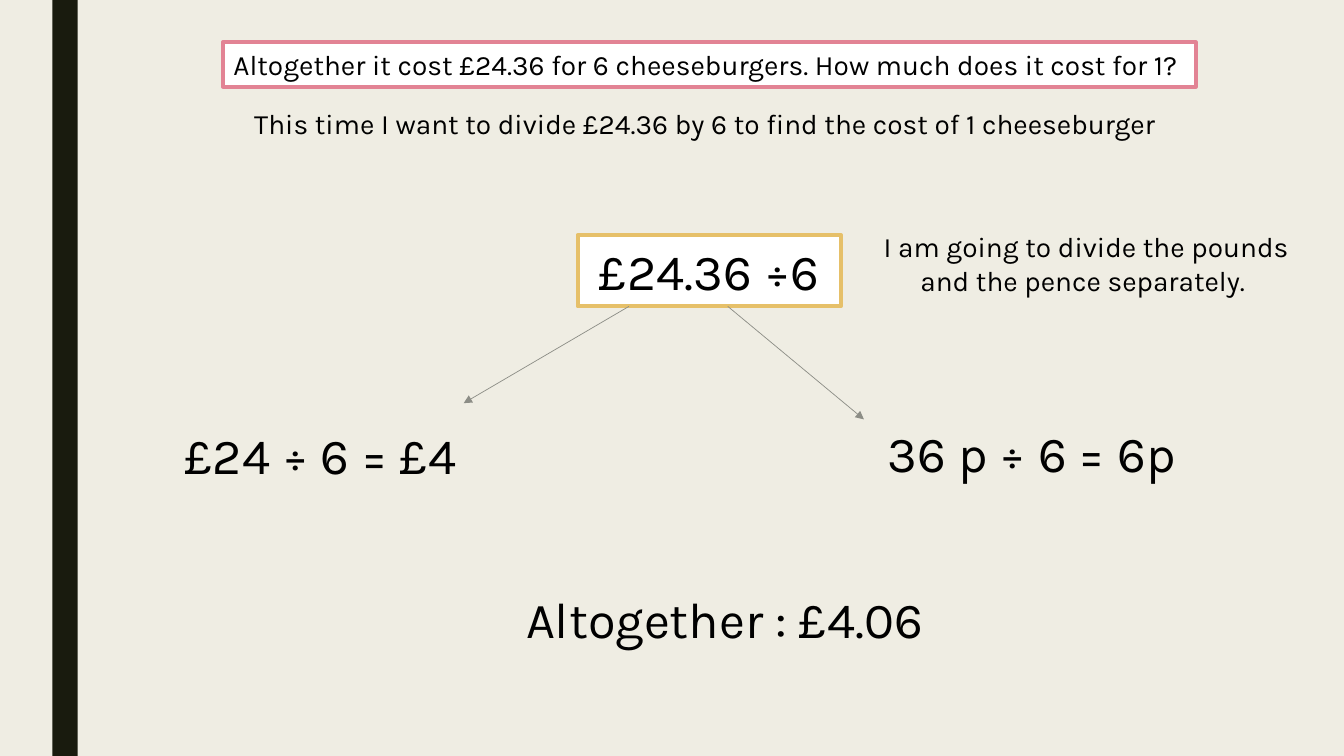
"""Build a slide that splits a money division into pounds and pence."""
from dataclasses import dataclass
from typing import Optional

from lxml.etree import SubElement
from pptx import Presentation
from pptx.dml.color import RGBColor
from pptx.enum.shapes import MSO_CONNECTOR, MSO_SHAPE
from pptx.enum.text import MSO_ANCHOR, MSO_AUTO_SIZE, PP_ALIGN
from pptx.oxml.ns import qn
from pptx.shapes.autoshape import Shape
from pptx.slide import Slide
from pptx.util import Inches, Length, Pt


@dataclass(frozen=True)
class Theme:
    font: str = "Karla"
    small: int = 20
    large: int = 36
    frame: float = 2.75
    thin: float = 0.5
    ink: str = "000000"
    paper: str = "EFEDE3"
    white: str = "FFFFFF"
    bar: str = "191B0E"
    pink: str = "E28394"
    gold: str = "E6C069"
    grey: str = "8C8D86"


@dataclass(frozen=True)
class Label:
    text: str
    left: float
    top: float
    width: float
    height: float
    size: int
    edge: Optional[str] = None


@dataclass(frozen=True)
class Arrow:
    start: tuple[float, float]
    end: tuple[float, float]


THEME = Theme()
WIDE, HIGH = Inches(13.33), Inches(7.5)
SMALL_ROW, PAIR_ROW, LARGE_ROW = 5.87, 10.27, 9.47
SPLIT = 40.53

LABELS = [
    Label("Altogether it cost £24.36 for 6 cheeseburgers. How much does it cost for 1? ",
          16.58, 5.6, 72.38, SMALL_ROW, THEME.small, THEME.pink),
    Label("This time I want to divide £24.36 by 6 to find the cost of 1 cheeseburger ",
          7.5, 13.47, 90.45, SMALL_ROW, THEME.small),
    Label("£24.36 ÷6", 42.98, 31.07, 19.58, LARGE_ROW, THEME.large, THEME.gold),
    Label("I am going to divide the pounds and the pence separately. ",
          63.68, 29.73, 34.28, PAIR_ROW, THEME.small),
    Label("£24 ÷ 6 = £4", 11.85, 55.47, 24, LARGE_ROW, THEME.large),
    Label("36 p ÷ 6 = 6p", 59.63, 55.2, 34.28, LARGE_ROW, THEME.large),
    Label("Altogether : £4.06", 25.35, 77.2, 57.15, LARGE_ROW, THEME.large),
]
ARROWS = [
    Arrow((46.8, SPLIT), (34.5, 53.33)),
    Arrow((54.15, SPLIT), (64.28, 55.47)),
]


def color(code: str) -> RGBColor:
    """Turn a hex code into a colour."""
    return RGBColor.from_string(code)


def across(share: float) -> Length:
    """Give a percentage of the slide width."""
    return Length(round(WIDE * share / 100))


def down(share: float) -> Length:
    """Give a percentage of the slide height."""
    return Length(round(HIGH * share / 100))


def add_block(slide: Slide, left: float, top: float, width: float,
              height: float, fill: str, edge: Optional[str] = None) -> Shape:
    """Draw a filled rectangle with an optional frame."""
    block = slide.shapes.add_shape(MSO_SHAPE.RECTANGLE, across(left), down(top),
                                   across(width), down(height))
    block.shadow.inherit = False
    block.fill.solid()
    block.fill.fore_color.rgb = color(fill)
    if edge:
        block.line.color.rgb = color(edge)
        block.line.width = Pt(THEME.frame)
    else:
        block.line.fill.background()
    return block


def add_label(slide: Slide, label: Label) -> None:
    """Draw one centred line of text, framed when it has an edge."""
    place = label.left, label.top, label.width, label.height
    if label.edge:
        shape = add_block(slide, *place, THEME.white, label.edge)
    else:
        shape = slide.shapes.add_textbox(across(label.left), down(label.top),
                                         across(label.width), down(label.height))
    frame = shape.text_frame
    frame.word_wrap = True
    frame.auto_size = MSO_AUTO_SIZE.SHAPE_TO_FIT_TEXT
    frame.vertical_anchor = MSO_ANCHOR.TOP
    line = frame.paragraphs[0]
    line.text = label.text
    line.alignment = PP_ALIGN.CENTER
    line.font.name = THEME.font
    line.font.size = Pt(label.size)
    line.font.color.rgb = color(THEME.ink)


def add_arrow(slide: Slide, arrow: Arrow) -> None:
    """Draw a thin line that ends in a triangle."""
    (left, top), (right, base) = arrow.start, arrow.end
    line = slide.shapes.add_connector(MSO_CONNECTOR.STRAIGHT, across(left), down(top),
                                      across(right), down(base))
    line.line.color.rgb = color(THEME.grey)
    line.line.width = Pt(THEME.thin)
    props = line._element.spPr
    SubElement(props.find(qn("a:ln")), qn("a:tailEnd"), type="triangle")
    SubElement(props, qn("a:effectLst"))


def main() -> None:
    """Build and save the slide."""
    deck = Presentation()
    deck.slide_width, deck.slide_height = WIDE, HIGH
    slide = deck.slides.add_slide(deck.slide_layouts[6])
    slide.background.fill.solid()
    slide.background.fill.fore_color.rgb = color(THEME.paper)
    add_block(slide, 3.9, 0, 1.88, 100, THEME.bar)
    for label in LABELS:
        add_label(slide, label)
    for arrow in ARROWS:
        add_arrow(slide, arrow)
    deck.save("out.pptx")


if __name__ == "__main__":
    main()
